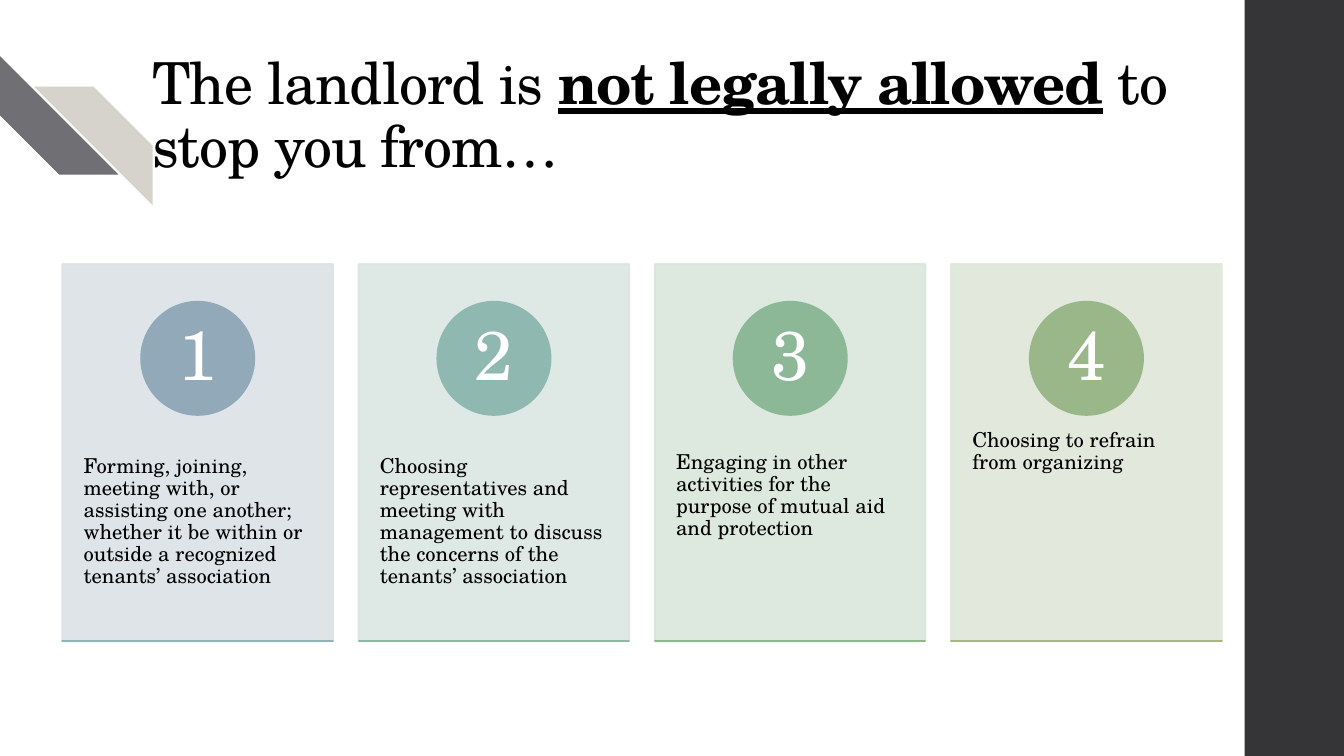
from lxml.etree import SubElement
from pptx import Presentation
from pptx.dml.color import RGBColor as RGB
from pptx.enum.shapes import MSO_SHAPE as SHAPE
from pptx.enum.text import MSO_ANCHOR as ANCHOR, PP_ALIGN as ALIGN
from pptx.oxml.ns import qn
from pptx.util import Pt

COLORS = {
    "text": "000000", "number": "FFFFFF", "sidebar": "353537",
    "stripe_dark": "6F6F74", "stripe_light": "D6D3CC",
}

# Card fill, circle, bottom rule, text
CARDS = [
    ("DCE2E6", "92A9B9", "91B4B9",
     "Forming, joining, meeting with, or assisting one another; "
     "whether it be within or outside a recognized tenants’ association"),
    ("DBE6E3", "8FB8B1", "8EB8A4",
     "Choosing representatives and meeting with management to discuss "
     "the concerns of the tenants’ association"),
    ("DAE6DB", "8DB897", "8EB88C",
     "Engaging in other activities for the purpose of mutual aid and protection"),
    ("E1E6DA", "9AB78A", "A7B789", "Choosing to refrain from organizing"),
]
CARD_LEFT, CARD_TOP, CARD_W, CARD_H, CARD_PITCH = 33.5, 141.5, 144.9, 202, 158.7
CIRCLE, NUMBER = 60.5, 43


class Deck:
    font = "TeX Gyre Schola"
    line_spacing = 0.9
    outline = 1.1

    def __init__(self, slide):
        self.slide = slide

    def shape(self, kind, box, color, outlined=False, opacity=None, rotation=0):
        sp = self.slide.shapes.add_shape(kind, *map(Pt, box))
        sp.shadow.inherit = False
        sp.rotation = rotation
        sp.fill.solid()
        sp.fill.fore_color.rgb = RGB.from_string(color)
        if outlined:
            sp.line.width = Pt(self.outline)
            sp.line.color.rgb = RGB.from_string(color)
        else:
            sp.line.fill.background()
        if opacity is not None:
            for clr in sp._element.spPr.iter(qn("a:srgbClr")):
                SubElement(clr, qn("a:alpha")).set("val", str(opacity * 1000))
        return sp

    def text(self, box, runs, size, color, inset=(7.2, 3.6),
             anchor=ANCHOR.TOP, align=ALIGN.LEFT, tracking=0):
        tf = self.slide.shapes.add_textbox(*map(Pt, box)).text_frame
        tf.word_wrap = True
        tf.vertical_anchor = anchor
        tf.margin_left = tf.margin_right = Pt(inset[0])
        tf.margin_top = tf.margin_bottom = Pt(inset[1])
        p = tf.paragraphs[0]
        p.alignment = align
        p.line_spacing = self.line_spacing
        for content, strong in runs:
            r = p.add_run()
            r.text = content
            r.font.name, r.font.size = self.font, Pt(size)
            r.font.bold = r.font.underline = strong
            r.font.color.rgb = RGB.from_string(color)
            if tracking:
                r._r.get_or_add_rPr().set("spc", str(round(tracking * 100)))

    def card(self, left, number, fill, accent, rule, content):
        self.shape(SHAPE.RECTANGLE, (left, CARD_TOP, CARD_W, CARD_H), fill, True, 90)
        self.text((left, 218.2, CARD_W, 121), [(content, False)], 11,
                  COLORS["text"], inset=(11.3, 25.7))
        center, middle = left + CARD_W / 2, CARD_TOP + 50.5
        self.shape(SHAPE.OVAL, (center - CIRCLE / 2, middle - CIRCLE / 2,
                                CIRCLE, CIRCLE), accent, True)
        self.text((center - NUMBER / 2, middle - NUMBER / 2, NUMBER, NUMBER),
                  [(str(number), False)], 37, COLORS["number"], inset=(4.7, 0.9),
                  anchor=ANCHOR.MIDDLE, align=ALIGN.CENTER)
        self.shape(SHAPE.RECTANGLE, (left, CARD_TOP + CARD_H, CARD_W, 0.01), rule, True)


def main():
    prs = Presentation()
    prs.slide_width, prs.slide_height = Pt(720), Pt(405)
    deck = Deck(prs.slides.add_slide(prs.slide_layouts[6]))

    # Corner stripes and sidebar
    deck.shape(SHAPE.DIAGONAL_STRIPE, (0, 30, 63.6, 63.6),
               COLORS["stripe_dark"], rotation=270)
    deck.shape(SHAPE.DIAGONAL_STRIPE, (18.2, 46.4, 63.6, 63.6),
               COLORS["stripe_light"], rotation=90)
    deck.shape(SHAPE.RECTANGLE, (666.8, 0, 53.2, 405), COLORS["sidebar"])

    # Title
    deck.text((74.4, 21.6, 572.4, 78.4),
              [("The landlord is ", False), ("not legally allowed", True),
               (" to stop you from…", False)],
              31, COLORS["text"], anchor=ANCHOR.BOTTOM, tracking=-0.5)

    # Numbered cards
    for i, card in enumerate(CARDS):
        deck.card(CARD_LEFT + i * CARD_PITCH, i + 1, *card)

    prs.save("out.pptx")


if __name__ == "__main__":
    main()
